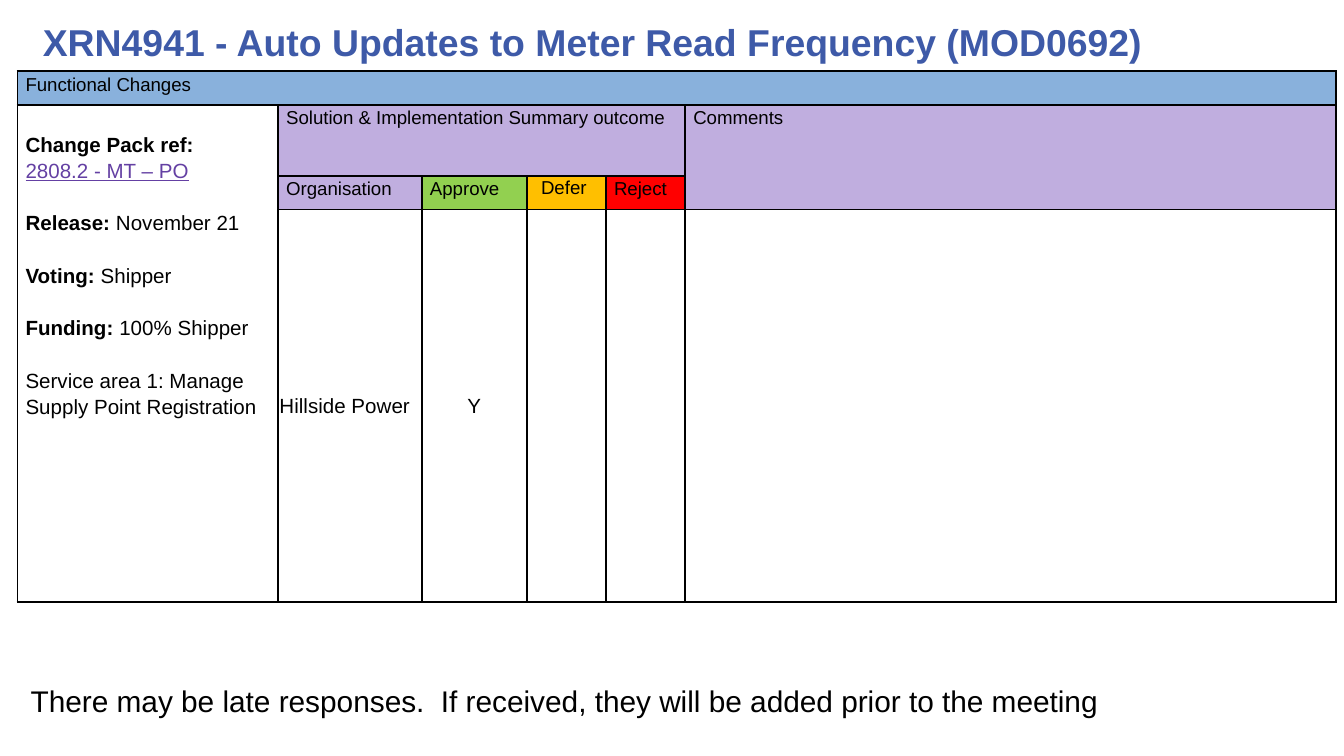
from lxml.etree import SubElement
from pptx import Presentation
from pptx.dml.color import RGBColor
from pptx.enum.text import MSO_ANCHOR, PP_ALIGN
from pptx.oxml.ns import qn
from pptx.util import Inches, Pt

BLACK, BLUE, LILAC = "000000", "89B1DC", "C0AEDF"
GREEN, AMBER, RED = "92D050", "FFBF00", "FF0000"
TITLE_BLUE, REFERENCE_PURPLE = "3E5AA8", "6440A3"


def add_run(paragraph, text, size, color=BLACK, bold=False, underline=False):
    run = paragraph.add_run()
    run.text = text
    font = run.font
    font.name, font.size, font.bold = "Arial", Pt(size), bold
    font.underline = underline
    font.color.rgb = RGBColor.from_string(color)


def style_cell(cell, fill=None):
    """Draw black borders on all sides, then set margins and fill."""
    properties = cell._tc.get_or_add_tcPr()
    for side in ("lnL", "lnR", "lnT", "lnB"):
        line = SubElement(properties, qn(f"a:{side}"), w=str(Pt(1)))
        solid = SubElement(line, qn("a:solidFill"))
        SubElement(solid, qn("a:srgbClr"), val=BLACK)
    cell.margin_left = cell.margin_right = Inches(0.06)
    cell.margin_top = cell.margin_bottom = 0
    if fill:
        cell.fill.solid()
        cell.fill.fore_color.rgb = RGBColor.from_string(fill)
    else:
        cell.fill.background()


presentation = Presentation()
presentation.slide_width = Inches(10)
presentation.slide_height = presentation.slide_width * 9 // 16
slide = presentation.slides.add_slide(presentation.slide_layouts[6])

# Title
title = slide.shapes.add_textbox(Inches(0.22), Inches(0.09), Inches(9.71), Inches(0.44))
title.text_frame.word_wrap = True
add_run(title.text_frame.paragraphs[0],
        "XRN4941 - Auto Updates to Meter Read Frequency (MOD0692)", 20, TITLE_BLUE, bold=True)

# Table grid
column_widths = (1.94, 1.07, 0.78, 0.59, 0.59, 4.84)
row_heights = (0.25, 0.53, 0.25, 2.92)
table = slide.shapes.add_table(
    len(row_heights), len(column_widths), Inches(0.13), Inches(0.53),
    Inches(sum(column_widths)), Inches(sum(row_heights))).table
table.first_row = table.horz_banding = False
for column, width in zip(table.columns, column_widths):
    column.width = Inches(width)
for row, height in zip(table.rows, row_heights):
    row.height = Inches(height)

fills = (
    (BLUE,) * 6,
    (None,) + (LILAC,) * 5,
    (None, LILAC, GREEN, AMBER, RED, LILAC),
    (None,) * 6,
)
for row, row_fills in zip(table.rows, fills):
    for cell, fill in zip(row.cells, row_fills):
        style_cell(cell, fill)

for start, end in (((0, 0), (0, 5)), ((1, 0), (3, 0)), ((1, 1), (1, 4)), ((1, 5), (2, 5))):
    table.cell(*start).merge(table.cell(*end))

# Headings
for row, column, text in (
    (0, 0, "Functional Changes"),
    (1, 1, "Solution & Implementation Summary outcome"),
    (1, 5, "Comments"),
    (2, 1, "Organisation"),
    (2, 2, "Approve"),
    (2, 4, "Reject"),
):
    paragraph = table.cell(row, column).text_frame.paragraphs[0]
    paragraph.line_spacing = 1.15
    add_run(paragraph, text, 10)

# Defer heading and the response, set tight to the cell edges
for row, column, text, size, alignment, anchor in (
    (2, 3, "Defer ", 10, PP_ALIGN.CENTER, MSO_ANCHOR.TOP),
    (3, 1, "Hillside Power", 11, PP_ALIGN.LEFT, MSO_ANCHOR.MIDDLE),
    (3, 2, "Y", 11, PP_ALIGN.CENTER, MSO_ANCHOR.MIDDLE),
):
    cell = table.cell(row, column)
    cell.margin_left = cell.margin_right = cell.margin_top = Inches(0.01)
    cell.vertical_anchor = anchor
    paragraph = cell.text_frame.paragraphs[0]
    paragraph.alignment = alignment
    add_run(paragraph, text, size)

# Change details: bold label, plain value, one line's gap between groups
details = table.cell(1, 0)
details.margin_top = Inches(0.19)
paragraph = details.text_frame.paragraphs[0]
paragraph.line_spacing = 1.15
add_run(paragraph, "Change Pack ref:", 11, bold=True)
paragraph = details.text_frame.add_paragraph()
paragraph.line_spacing = 1.15
add_run(paragraph, "2808.2 - MT – PO", 11, REFERENCE_PURPLE, underline=True)
for label, value in (
    ("Release: ", "November 21"),
    ("Voting: ", "Shipper"),
    ("Funding:", " 100% Shipper"),
    ("", "Service area 1: Manage Supply Point Registration"),
):
    paragraph = details.text_frame.add_paragraph()
    paragraph.line_spacing = 1.15
    paragraph.space_before = Pt(14)
    if label:
        add_run(paragraph, label, 11, bold=True)
    add_run(paragraph, value, 11)

# Footnote
footnote = slide.shapes.add_textbox(Inches(0.13), Inches(5.03), Inches(9.71), Inches(0.37))
footnote.text_frame.word_wrap = True
add_run(footnote.text_frame.paragraphs[0],
        "There may be late responses.  If received, they will be added prior to the meeting", 16)

presentation.save("out.pptx")
